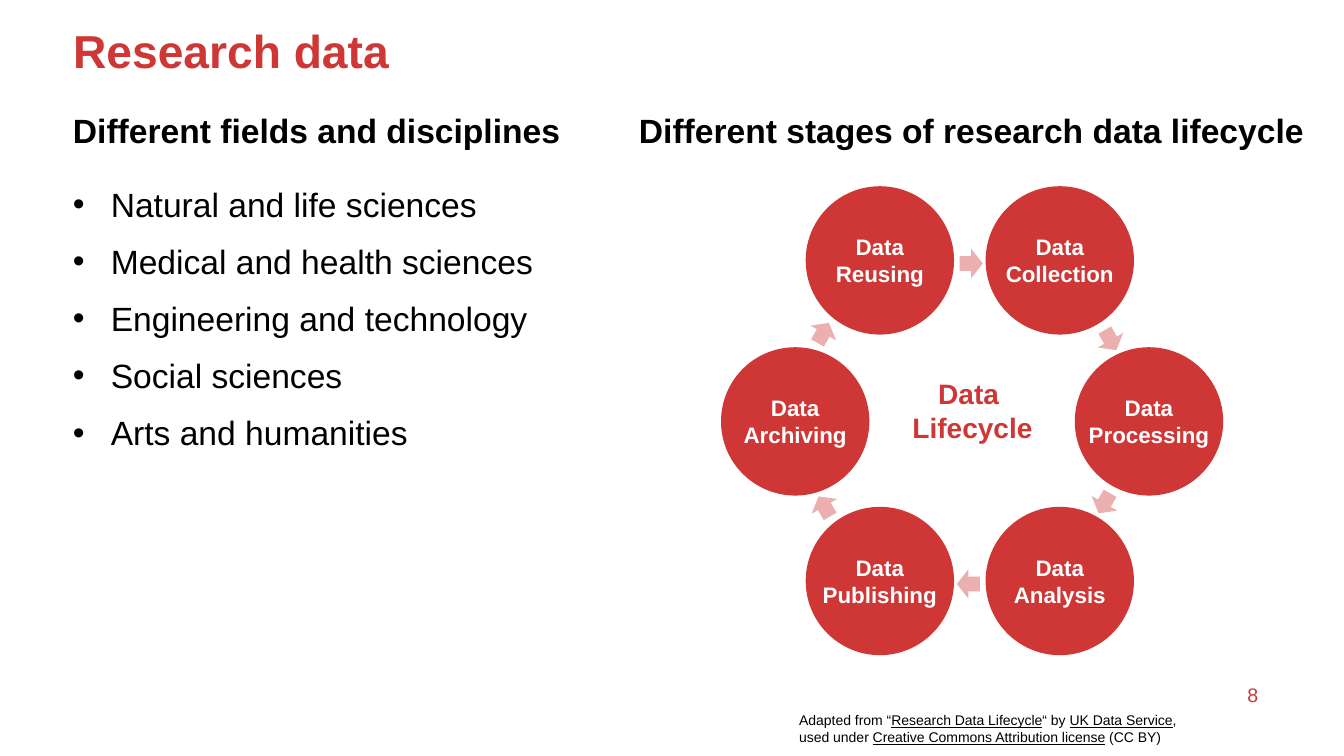
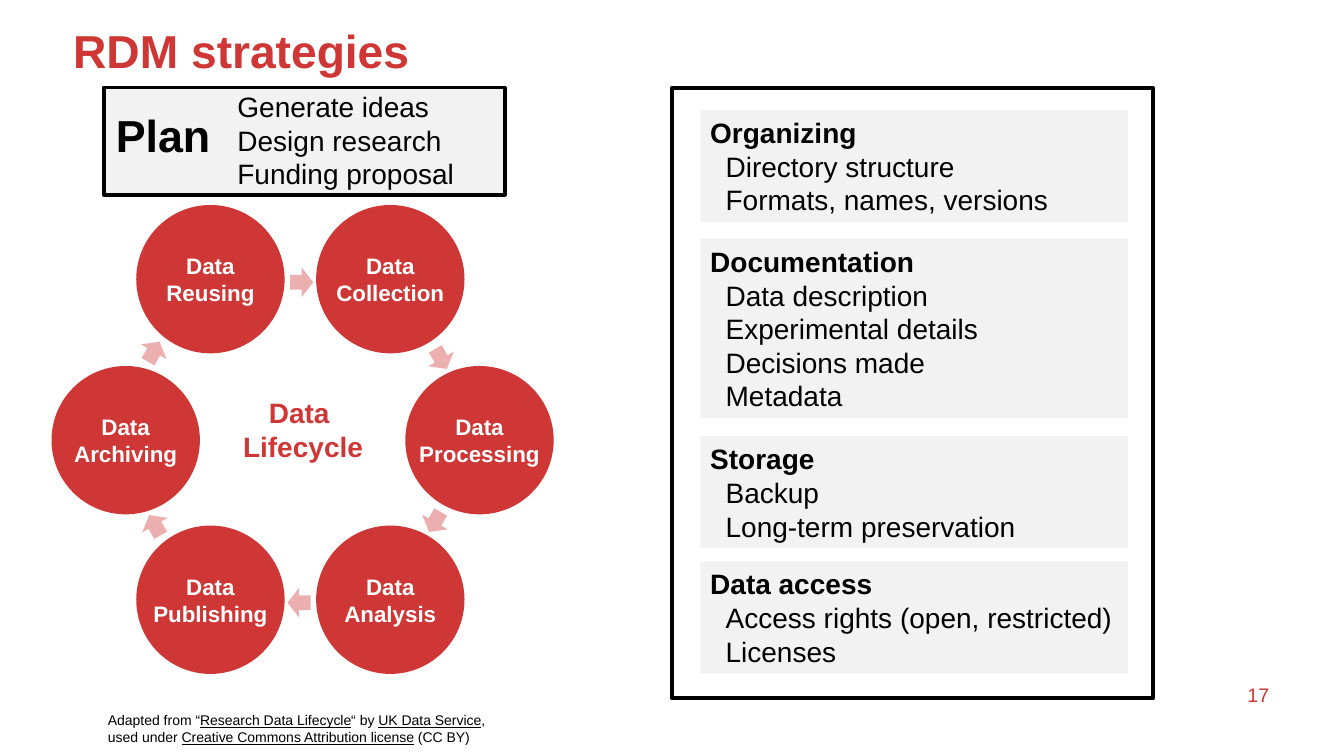
from pptx import Presentation
from pptx.dml.color import RGBColor
from pptx.enum.shapes import MSO_SHAPE
from pptx.enum.text import MSO_ANCHOR, MSO_AUTO_SIZE, PP_ALIGN
from pptx.oxml.ns import qn
from pptx.util import Pt
from lxml import etree

RECT, OVAL, ARROW = MSO_SHAPE.RECTANGLE, MSO_SHAPE.OVAL, MSO_SHAPE.RIGHT_ARROW
TOP, MID, LOW = MSO_ANCHOR.TOP, MSO_ANCHOR.MIDDLE, MSO_ANCHOR.BOTTOM
LEFT, MIDST = PP_ALIGN.LEFT, PP_ALIGN.CENTER

FONT = "Arial"
RED, PINK, GREY = "CE3736", "EBAFAF", "F2F2F2"
BLACK, WHITE = "000000", "FFFFFF"

# Lifecycle ring: places relative to its top left corner
DISC = 106
STAGES = [
    ("Reusing", 60.5, 0), ("Collection", 189, 0),
    ("Processing", 252.7, 115), ("Analysis", 189, 229),
    ("Publishing", 60.5, 229), ("Archiving", 0, 115),
]
TURNS = [
    (0, 170.5, 44.7), (60, 270, 99.5), (120, 265.6, 216),
    (180, 168.5, 273.6), (240, 65.6, 218.2), (300, 64.8, 94.3),
]

# Credit lines as (text, underlined) runs
CREDIT = [
    [("Adapted from “", False), ("Research Data Lifecycle", True),
     ("“ by ", False), ("UK Data Service", True), (",", False)],
    [("used under ", False),
     ("Creative Commons Attribution license", True), (" (CC BY)", False)],
]

FIELDS = ["Natural and life sciences", "Medical and health sciences",
          "Engineering and technology", "Social sciences",
          "Arts and humanities"]

# Cards as (top, height, head, items)
CARDS = [
    (78.7, 80, "Organizing",
     ["Directory structure", "Formats, names, versions"]),
    (170.5, 128.3, "Documentation",
     ["Data description", "Experimental details", "Decisions made",
      "Metadata"]),
    (311.6, 80, "Storage", ["Backup", "Long-term preservation"]),
    (401, 80, "Data access",
     ["Access rights (open, restricted)", "Licenses"]),
]


def tint(code):
    return RGBColor.from_string(code)


class Deck:
    def __init__(self):
        self.prs = Presentation()
        self.prs.slide_width, self.prs.slide_height = Pt(960), Pt(540)
        self.slide = None

    def page(self, title, number):
        """Start a slide with its title and page number."""
        self.slide = self.prs.slides.add_slide(self.prs.slide_layouts[5])
        head = self.slide.shapes.title
        head.left, head.top = Pt(45), Pt(18)
        head.width, head.height = Pt(835), Pt(41)
        self.frame(head, LOW)
        par = self.line(head, title, 33, RED, bold=True)
        par.line_spacing = 0.8
        num = self.box(884, 482, 42, 29, MID)
        self.line(num, number, 14, RED)

    def frame(self, shape, anchor, pad=None):
        text = shape.text_frame
        text.word_wrap = True
        text.auto_size = MSO_AUTO_SIZE.NONE
        text.vertical_anchor = anchor
        if pad is not None:
            text.margin_left = text.margin_right = Pt(pad)

    def box(self, x, y, w, h, anchor=TOP):
        shape = self.slide.shapes.add_textbox(Pt(x), Pt(y), Pt(w), Pt(h))
        self.frame(shape, anchor)
        return shape

    def form(self, kind, x, y, w, h, fill=None, edge=None, pad=None):
        shape = self.slide.shapes.add_shape(kind, Pt(x), Pt(y), Pt(w), Pt(h))
        shape.shadow.inherit = False
        if fill:
            shape.fill.solid()
            shape.fill.fore_color.rgb = tint(fill)
        else:
            shape.fill.background()
        if edge:
            shape.line.color.rgb = tint(edge)
            shape.line.width = Pt(2.75)
        else:
            shape.line.fill.background()
        self.frame(shape, MID, pad)
        return shape

    def line(self, shape, text, size, color=BLACK, bold=False, align=LEFT,
             after=0, inset=0, bullet=False):
        """Add a paragraph; text is a string or (text, underlined) runs."""
        body = shape.text_frame
        par = body.paragraphs[0]
        if par.runs:
            par = body.add_paragraph()
        par.alignment = align
        par.space_before, par.space_after = Pt(0), Pt(after)
        if inset:
            prop = par._p.get_or_add_pPr()
            prop.set("marL", str(Pt(inset)))
            prop.set("indent", str(Pt(-inset if bullet else 0)))
            if bullet:
                face = etree.SubElement(prop, qn("a:buFont"))
                face.set("typeface", FONT)
                etree.SubElement(prop, qn("a:buChar")).set("char", "•")
        runs = [(text, False)] if isinstance(text, str) else text
        for word, under in runs:
            run = par.add_run()
            run.text = word
            font = run.font
            font.name, font.size, font.bold = FONT, Pt(size), bold
            font.color.rgb = tint(color)
            if under:
                font.underline = True
        return par

    def cycle(self, x, y):
        """Draw the ring of stages with its hub label and arrows."""
        for name, dx, dy in STAGES:
            disc = self.form(OVAL, x + dx, y + dy, DISC, DISC, RED, pad=0)
            disc.text_frame.word_wrap = False
            for word in ("Data", name):
                self.line(disc, word, 16, WHITE, True, MIDST)
        hub = self.box(x + 121.7, y + 132.7, 116, 60)
        for word in ("Data ", "Lifecycle"):
            self.line(hub, word, 20, RED, True, MIDST)
        for turn, dx, dy in TURNS:
            arrow = self.form(ARROW, x + dx, y + dy, 16.5, 21, PINK)
            arrow.rotation = turn

    def credit(self, x):
        note = self.box(x, 504.7, 290, 31.5)
        for runs in CREDIT:
            self.line(note, runs, 10)

    def card(self, y, h, head, items):
        card = self.form(RECT, 500.2, y, 305.5, h, GREY)
        self.line(card, head, 20, bold=True)
        for item in items:
            self.line(card, item, 20, inset=11)


def main():
    deck = Deck()

    # Fields on the left, lifecycle on the right
    deck.page("Research data", "8")
    left = deck.box(45, 75, 461, 378)
    deck.line(left, "Different fields and disciplines", 24, bold=True,
              after=24)
    for field in FIELDS:
        deck.line(left, field, 24, after=12, inset=27, bullet=True)
    right = deck.box(449.3, 75, 506, 40)
    deck.line(right, "Different stages of research data lifecycle", 24,
              bold=True)
    deck.cycle(515, 133)
    deck.credit(563.7)

    # Plan and lifecycle on the left, strategy cards on the right
    deck.page("RDM strategies", "17")
    deck.cycle(36.8, 146.4)
    deck.form(RECT, 479.8, 62.8, 344, 436, edge=BLACK)
    for card in CARDS:
        deck.card(*card)
    deck.form(RECT, 74, 62.5, 286.5, 76.5, GREY, BLACK)
    ideas = deck.box(162.5, 60.5, 210, 80)
    for step in ("Generate ideas", "Design research", "Funding proposal"):
        deck.line(ideas, step, 20)
    plan = deck.box(75.6, 73.5, 96, 46)
    deck.line(plan, "Plan", 32, bold=True)
    deck.credit(70)

    deck.prs.save("out.pptx")


if __name__ == "__main__":
    main()
